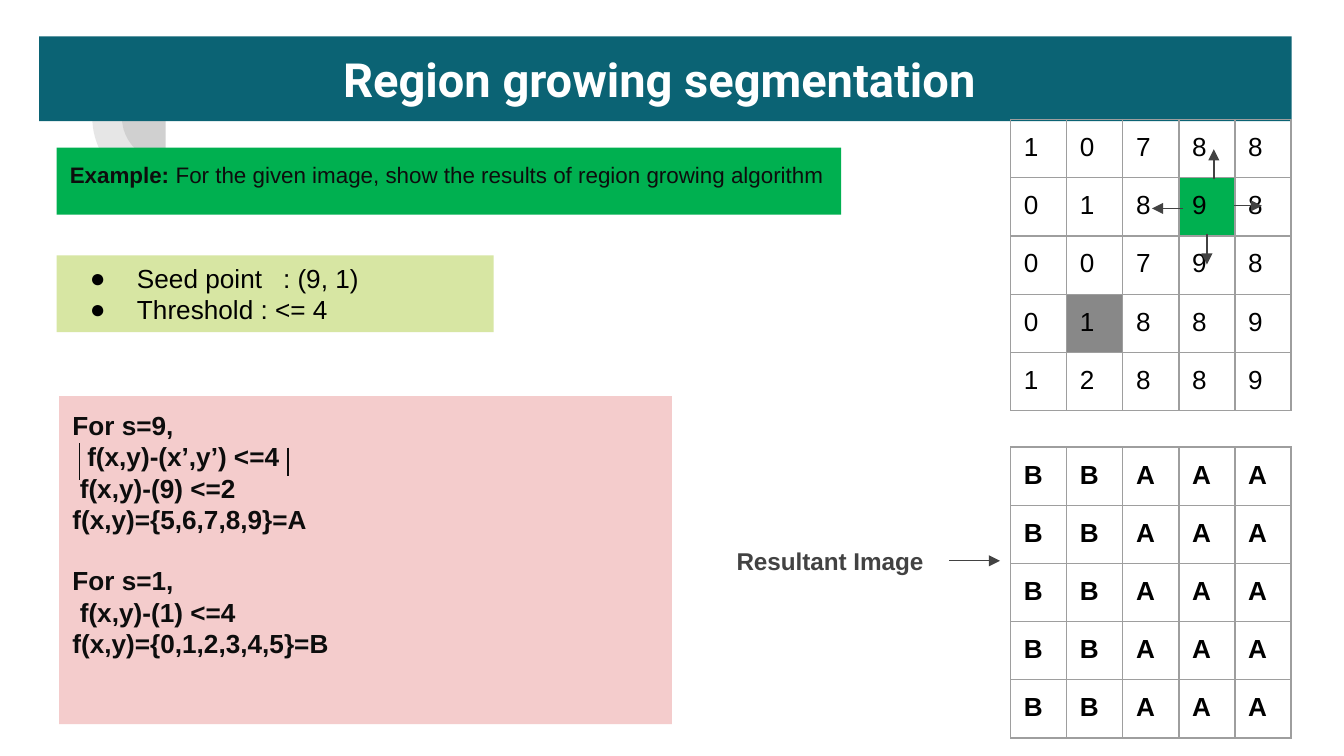
from dataclasses import dataclass, field

from lxml.etree import SubElement as Sub
from pptx import Presentation
from pptx.dml.color import RGBColor
from pptx.enum.shapes import MSO_CONNECTOR as Link, MSO_SHAPE as Kind
from pptx.enum.text import MSO_ANCHOR as Anchor, PP_ALIGN as Align
from pptx.oxml.ns import qn
from pptx.util import Cm, Pt

INK, GREY, GREEN = "0D0D0D", "424242", "00B050"
PAD = 0.25


@dataclass
class Line:
    text: str
    bold: bool = False
    lead: str = ""  # bold words before the text
    left: float = 0
    hang: float = 0
    mark: str = ""
    tab: float = 0
    gap: float = 0  # points before


@dataclass
class Box:
    x: float
    y: float
    w: float
    h: float
    lines: list[Line]
    fill: str = ""
    color: str = INK
    size: float = 14
    name: str = "Arial"
    pad: float = PAD
    align: Align = Align.LEFT
    anchor: Anchor = Anchor.TOP


@dataclass
class Rule:
    x: float
    y: float
    to_x: float
    to_y: float
    color: str = GREY
    head: bool = True


@dataclass
class Grid:
    y: float
    rows: list[str]
    bold: bool = False
    fills: dict = field(default_factory=dict)


def rgb(code: str) -> RGBColor:
    return RGBColor.from_string(code)


def style(font, color: str, **form) -> None:
    for key, value in form.items():
        setattr(font, key, value)
    font.color.rgb = rgb(color)


def inset(frame, pad_x: float, pad_y: float) -> None:
    pads = {"margin_left": pad_x, "margin_right": pad_x,
            "margin_top": pad_y, "margin_bottom": pad_y}
    for key, value in pads.items():
        setattr(frame, key, Cm(value))


def write(para, line: Line, box: Box) -> None:
    props = para._p.get_or_add_pPr()
    props.set("marL", str(Cm(line.left)))
    props.set("indent", str(Cm(line.hang)))
    if line.mark:
        Sub(Sub(props, qn("a:buClr")), qn("a:srgbClr"), val="000000")
        Sub(props, qn("a:buFont"), typeface="Arial")
        Sub(props, qn("a:buChar"), char=line.mark)
    if line.tab:
        Sub(Sub(props, qn("a:tabLst")), qn("a:tab"), pos=str(Cm(line.tab)), algn="l")
    para.alignment = box.align
    if line.gap:
        para.space_before = Pt(line.gap)
    for text, bold in ((line.lead, True), (line.text, line.bold)):
        if text:
            run = para.add_run()
            run.text = text
            style(run.font, box.color, name=box.name, size=Pt(box.size), bold=bold)


def draw_box(shapes, box: Box):
    area = [Cm(n) for n in (box.x, box.y, box.w, box.h)]
    if box.fill:
        shape = shapes.add_shape(Kind.RECTANGLE, *area)
        shape.shadow.inherit = False
        shape.fill.solid()
        shape.fill.fore_color.rgb = rgb(box.fill)
        shape.line.fill.background()
    else:
        shape = shapes.add_textbox(*area)
    frame = shape.text_frame
    frame.word_wrap = True
    frame.vertical_anchor = box.anchor
    inset(frame, PAD, box.pad)
    for i, line in enumerate(box.lines):
        write(frame.add_paragraph() if i else frame.paragraphs[0], line, box)
    return shape


def draw_pie(shapes, x: float, y: float, size: float) -> None:
    pie = shapes.add_shape(Kind.PIE, Cm(x - size / 2), Cm(y - size / 2), Cm(size), Cm(size))
    pie.adjustments[0], pie.adjustments[1] = 108, 162
    pie.rotation = 270
    pie.shadow.inherit = False
    pie.line.fill.background()
    pie.fill.solid()
    pie.fill.fore_color.rgb = rgb(GREY)
    tint = pie._element.spPr.find(".//" + qn("a:srgbClr"))
    Sub(tint, qn("a:alpha"), val="13000")


def draw_rule(shapes, rule: Rule):
    ends = [Cm(n) for n in (rule.x, rule.y, rule.to_x, rule.to_y)]
    link = shapes.add_connector(Link.STRAIGHT, *ends)
    link.line.width = Pt(0.75)
    link.line.color.rgb = rgb(rule.color)
    if rule.head:
        Sub(link.line._get_or_add_ln(), qn("a:tailEnd"), type="triangle")
    Sub(link._element.spPr, qn("a:effectLst"))
    return link


def draw_grid(shapes, grid: Grid) -> None:
    wide, high = len(grid.rows[0]), len(grid.rows)
    col, row = Cm(1.06), Cm(1.1)
    table = shapes.add_table(high, wide, Cm(19.1), Cm(grid.y), col * wide, row * high).table
    table.first_row = table.horz_banding = False
    for r, marks in enumerate(grid.rows):
        for c, mark in enumerate(marks):
            cell = table.cell(r, c)
            cell.text = mark
            inset(cell, PAD, PAD)
            style(cell.text_frame.paragraphs[0].runs[0].font, "000000",
                  name="Arial", size=Pt(14), bold=grid.bold)
            props = cell._tc.get_or_add_tcPr()
            for side in "LRTB":
                edge = Sub(props, qn("a:ln" + side), w=str(Pt(0.75)))
                Sub(Sub(edge, qn("a:solidFill")), qn("a:srgbClr"), val="9E9E9E")
            if (r, c) in grid.fills:
                cell.fill.solid()
                cell.fill.fore_color.rgb = rgb(grid.fills[r, c])
            else:
                cell.fill.background()


TITLE = Box(0.74, 0.69, 23.67, 1.6, [Line("Region growing segmentation ", True)], "0B6374",
            "FFFFFF", 25.2, "Roboto", align=Align.CENTER, anchor=Anchor.MIDDLE)
SEED = Box(1.07, 4.83, 8.26, 1.45, [
    Line("Seed point\t: (9, 1)", left=1.27, hang=-0.89, mark="●", tab=4.03),
    Line("Threshold : <= 4", left=1.27, hang=-0.89, mark="●"),
], "D7E6A3", "000000", pad=0.13)
TASK = Box(1.07, 2.79, 14.83, 1.27, [
    Line("For the given image, show the results of region growing algorithm", lead="Example: "),
], GREEN, size=12)
STEPS = Box(1.12, 7.49, 11.58, 6.2, [
    Line("For s=9,", True),
    Line("f(x,y)-(x’,y’) <=4", True, left=0.28),
    Line("f(x,y)-(9) <=2", True, left=0.14),
    Line("f(x,y)={5,6,7,8,9}=A", True),
    Line("For s=1,", True, gap=16),
    Line("f(x,y)-(1) <=4", True, left=0.14),
    Line("f(x,y)={0,1,2,3,4,5}=B", True),
], "F4CCCC")
LABEL = Box(13.67, 10.08, 4.27, 1.04, [Line("Resultant Image", True)], color=GREY, size=13)

INPUT = Grid(2.26, ["10788", "01898", "00798", "01889", "12889"],
             fills={(1, 3): GREEN, (3, 1): "888888"})
RESULT = Grid(8.45, ["BBAAA"] * 5, bold=True)

RULES = [
    # Neighbours of the seed
    Rule(22.35, 3.94, 21.77, 3.94), Rule(22.94, 3.38, 22.94, 2.82),
    Rule(23.32, 3.89, 23.85, 3.89), Rule(22.81, 4.42, 22.81, 5),
    # Absolute value bars
    Rule(1.5, 8.38, 1.5, 9.07, INK, False), Rule(5.44, 8.46, 5.44, 9, INK, False),
]


def main() -> None:
    deck = Presentation()
    deck.slide_width, deck.slide_height = Cm(25.4), Cm(14.29)
    shapes = deck.slides.add_slide(deck.slide_layouts[6]).shapes

    # Corner ornament
    for size in (1.65, 2.77):
        draw_pie(shapes, 3.13, 2.22, size)

    # Text panels and grids
    for box in (TITLE, SEED, TASK):
        draw_box(shapes, box)
    draw_grid(shapes, INPUT)
    draw_box(shapes, STEPS)
    for rule in RULES:
        draw_rule(shapes, rule)
    draw_grid(shapes, RESULT)

    # Label pointing at the result
    label = draw_box(shapes, LABEL)
    link = draw_rule(shapes, Rule(17.94, 10.6, 18.9, 10.6))
    link.begin_connect(label, 3)

    deck.save("out.pptx")


if __name__ == "__main__":
    main()
